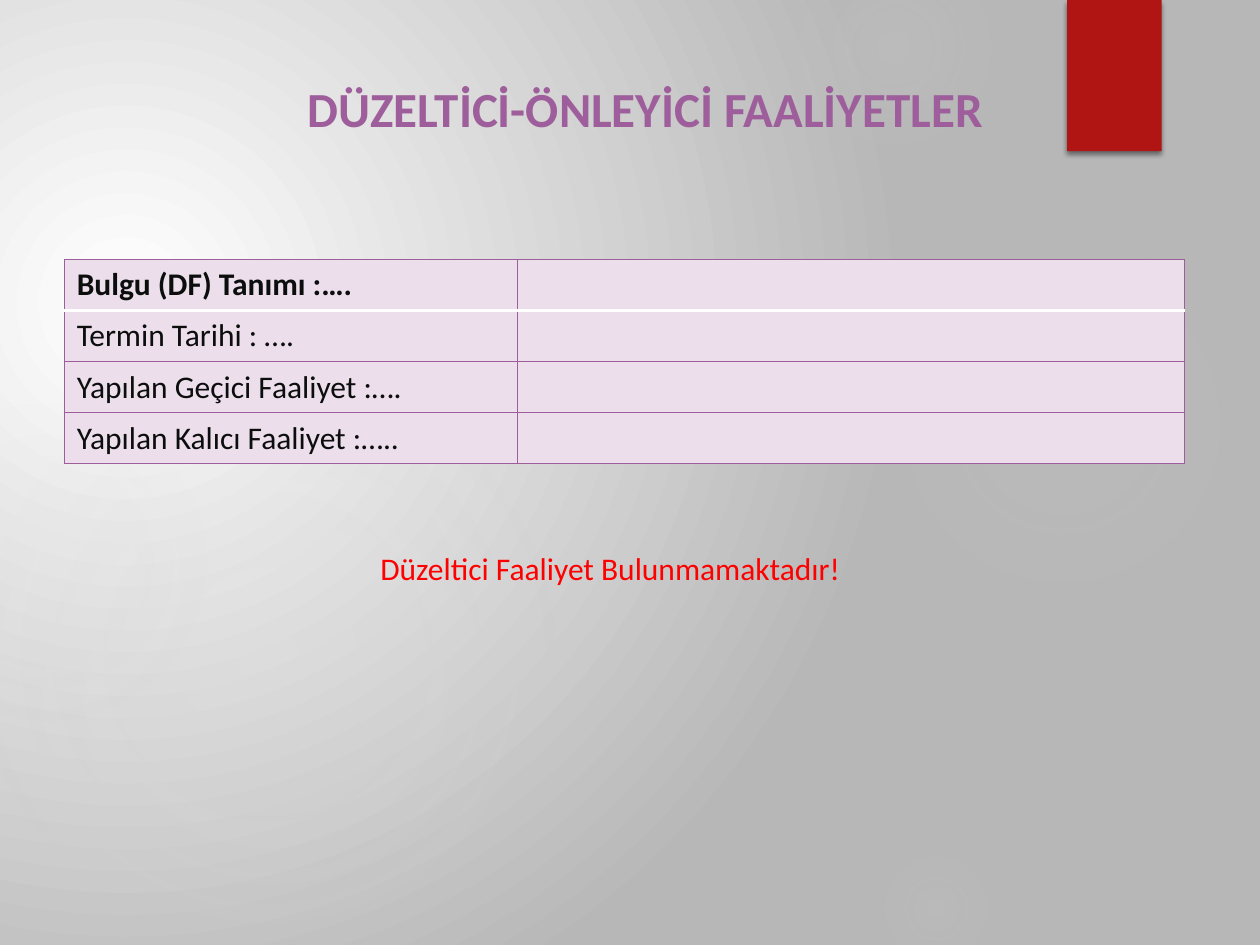
from pptx import Presentation
from pptx.dml.color import RGBColor
from pptx.enum.shapes import MSO_SHAPE as Shape
from pptx.enum.text import MSO_ANCHOR as Anchor, MSO_AUTO_SIZE as Fit, PP_ALIGN as Align
from pptx.oxml import parse_xml
from pptx.oxml.ns import nsdecls, qn
from pptx.util import Inches, Pt

WIDE, HIGH = 10, 7.5
PLUM, PALE, WHITE = "9E5E9B", "ECDFEB", "FFFFFF"
BODY = {"name": "Calibri", "size": Pt(18), "bold": False}
ROWS = ["Bulgu (DF) Tanımı :….", "Termin Tarihi : ….",
        "Yapılan Geçici Faaliyet :….", "Yapılan Kalıcı Faaliyet :….."]
# box, then (stop, opacity) pairs in percent
GLOWS = [((6.89, 1.83, 3.08, 3.08), [(0, 7), (36, 6), (69, 0)]),
         ((6.22, -0.5, 1.75, 1.75), [(0, 14), (36, 7), (73, 0)]),
         ((6.89, 6.67, 1.08, 1.08), [(0, 9), (36, 5), (66, 0)]),
         ((-0.17, 2.92, 4.58, 4.58), [(0, 11), (36, 10), (75, 0)]),
         ((-0.92, 3.17, 2.58, 2.58), [(0, 8), (36, 8), (72, 0)])]


def color(code):
    return RGBColor.from_string(code)


def inches(box):
    return [Inches(n) for n in box]


def style(item, values):
    for name, value in values.items():
        setattr(item, name, value)


def write(frame, text, code, **font):
    para = frame.paragraphs[0]
    run = para.add_run()
    run.text = text
    style(run.font, BODY | font)
    run.font.color.rgb = color(code)
    return para


def radial(fill, root, stops, focus):
    """Give the fill under root a circular gradient of (stop, colour, opacity)."""
    fill.gradient()
    marks = "".join(
        f'<a:gs pos="{pos * 1000}"><a:srgbClr val="{code}">'
        f'<a:alpha val="{part * 1000}"/></a:srgbClr></a:gs>'
        for pos, code, part in stops)
    sides = " ".join(f'{side}="{n * 1000}"' for side, n in zip("ltrb", focus))
    old = next(root.iter(qn("a:gradFill")))
    old.getparent().replace(old, parse_xml(
        f'<a:gradFill {nsdecls("a")} rotWithShape="1"><a:gsLst>{marks}</a:gsLst>'
        f'<a:path path="circle"><a:fillToRect {sides}/></a:path></a:gradFill>'))


def add_plain(slide, kind, box):
    shape = slide.shapes.add_shape(kind, *inches(box))
    shape.shadow.inherit = False
    shape.line.fill.background()
    return shape


def add_glow(slide, box, stops):
    glow = add_plain(slide, Shape.OVAL, box)
    radial(glow.fill, glow._element, [(pos, "D9D9D9", part) for pos, part in stops],
           (50, 50, 50, 50))


def add_tab(slide, box):
    tab = add_plain(slide, Shape.RECTANGLE, box)
    tab.fill.solid()
    tab.fill.fore_color.rgb = color("B01513")
    tab._element.spPr.find(qn("a:effectLst")).append(parse_xml(
        f'<a:outerShdw {nsdecls("a")} blurRad="{Pt(3)}" dist="{Pt(2)}" dir="5400000" '
        'rotWithShape="0"><a:srgbClr val="000000"><a:alpha val="45000"/></a:srgbClr>'
        '</a:outerShdw>'))


def set_title(slide, box, text):
    title = slide.shapes.title
    style(title, dict(zip(("left", "top", "width", "height"), inches(box))))
    slide.shapes._spTree.append(title._element)  # in front of the glows
    frame = title.text_frame
    style(frame, {"vertical_anchor": Anchor.MIDDLE, "word_wrap": True,
                  "auto_size": Fit.NONE})
    para = write(frame, text, PLUM, size=Pt(28), bold=True)
    style(para, {"alignment": Align.CENTER, "line_spacing": 0.9, "space_after": Pt(6)})


def edge(cell, side, code, width):
    cell._tc.get_or_add_tcPr().append(parse_xml(
        f'<a:ln{side} {nsdecls("a")} w="{Pt(width)}"><a:solidFill>'
        f'<a:srgbClr val="{code}"/></a:solidFill></a:ln{side}>'))


def add_form(slide, box, shares):
    table = slide.shapes.add_table(len(ROWS), len(shares), *inches(box)).table
    for col, share in zip(table.columns, shares):
        col.width = Inches(box[2] * share)
    for i, text in enumerate(ROWS):
        table.rows[i].height = Inches(box[3] / len(ROWS))
        for cell in table.rows[i].cells:
            for side in "LRTB":
                rule = (i, side) in ((0, "B"), (1, "T"))
                edge(cell, side, *((WHITE, 1.5) if rule else (PLUM, 0.75)))
            cell.fill.solid()
            cell.fill.fore_color.rgb = color(PALE)
        write(table.cell(i, 0).text_frame, text, "0C0D0D", bold=i == 0)


def add_note(slide, box, text):
    frame = slide.shapes.add_textbox(*inches(box)).text_frame
    style(frame, {"word_wrap": True, "auto_size": Fit.SHAPE_TO_FIT_TEXT})
    write(frame, text, "FF0000")


def main():
    deck = Presentation()
    style(deck, {"slide_width": Inches(WIDE), "slide_height": Inches(HIGH)})
    slide = deck.slides.add_slide(deck.slide_layouts[5])
    radial(slide.background.fill, slide._element,
           [(0, WHITE, 100), (100, "B7B7B7", 100)], (45, 65, 125, 100))
    for box, stops in GLOWS:
        add_glow(slide, box, stops)
    add_tab(slide, (8.47, 0, 0.75, 1.2))
    set_title(slide, (1.85, 0.53, 6.54, 0.71), "DÜZELTİCİ-ÖNLEYİCİ FAALİYETLER")
    add_form(slide, (0.51, 2.06, 8.89, 1.62), (0.405, 0.595))
    add_note(slide, (2.92, 4.31, 4.98, 0.4), "Düzeltici Faaliyet Bulunmamaktadır!")
    deck.save("out.pptx")


if __name__ == "__main__":
    main()
